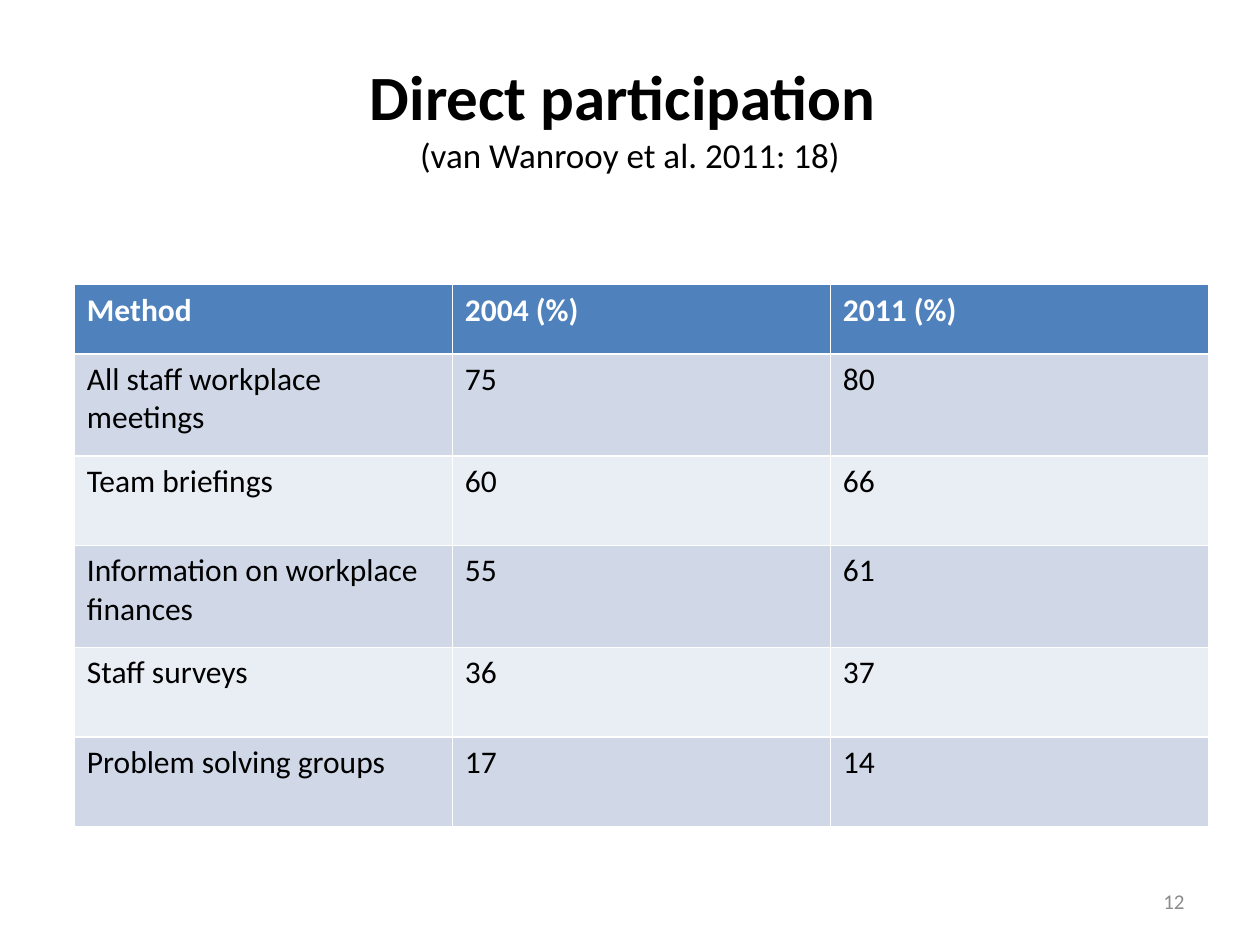
from pptx import Presentation
from pptx.dml.color import RGBColor
from pptx.enum import text
from pptx.util import Inches, Pt

FONT = "Calibri"
METHODS = [
    ("Method", "2004 (%)", "2011 (%)"),
    ("All staff workplace meetings", "75", "80"),
    ("Team briefings", "60", "66"),
    ("Information on workplace finances", "55", "61"),
    ("Staff surveys", "36", "37"),
    ("Problem solving groups", "17", "14"),
]
ROW_HEIGHTS = [0.55, 0.81, 0.71, 0.81, 0.71, 0.71]
HEADER_FILL = "4F81BD"
BAND_FILLS = ["E9EDF4", "D0D8E8"]


def color(value):
    return RGBColor.from_string(value)


def set_font(font, size, hex_color, bold=False):
    font.name = FONT
    font.size = Pt(size)
    font.bold = bold
    font.color.rgb = color(hex_color)


def add_title(page, left, top, width, height):
    box = page.shapes.title
    box.left, box.top = Inches(left), Inches(top)
    box.width, box.height = Inches(width), Inches(height)
    frame = box.text_frame
    frame.vertical_anchor = text.MSO_ANCHOR.MIDDLE
    para = frame.paragraphs[0]
    para.alignment = text.PP_ALIGN.CENTER

    heading = para.add_run()
    heading.text = "Direct participation "
    set_font(heading.font, 36, "000000", bold=True)
    para.add_line_break()
    citation = para.add_run()
    citation.text = "(van Wanrooy et al. 2011: 18)"
    set_font(citation.font, 20, "000000")


def add_methods_table(page, left, top, width):
    # The default table style supplies the white cell borders
    frame = page.shapes.add_table(
        len(METHODS), len(METHODS[0]), Inches(left), Inches(top),
        Inches(width), Inches(sum(ROW_HEIGHTS)))
    table = frame.table
    for row, height in zip(table.rows, ROW_HEIGHTS):
        row.height = Inches(height)

    for row_index, values in enumerate(METHODS):
        header = row_index == 0
        fill = HEADER_FILL if header else BAND_FILLS[row_index % 2]
        for column_index, value in enumerate(values):
            cell = table.cell(row_index, column_index)
            cell.text = value
            cell.fill.solid()
            cell.fill.fore_color.rgb = color(fill)
            set_font(cell.text_frame.paragraphs[0].font, 18,
                     "FFFFFF" if header else "000000", bold=header)


def add_page_number(page, left, top, width, height):
    box = page.shapes.add_textbox(
        Inches(left), Inches(top), Inches(width), Inches(height))
    frame = box.text_frame
    frame.word_wrap = True
    frame.vertical_anchor = text.MSO_ANCHOR.MIDDLE
    para = frame.paragraphs[0]
    para.text = "12"
    para.alignment = text.PP_ALIGN.RIGHT
    set_font(para.font, 12, "8C8C8C")


def main():
    deck = Presentation()
    deck.slide_width, deck.slide_height = Inches(10), Inches(7.5)
    title_only = deck.slide_layouts[5]
    page = deck.slides.add_slide(title_only)

    add_title(page, 0.5, 0.3, 9, 1.25)
    add_methods_table(page, 0.59, 2.26, 9)
    add_page_number(page, 7.17, 6.95, 2.33, 0.4)
    deck.save("out.pptx")


if __name__ == "__main__":
    main()
